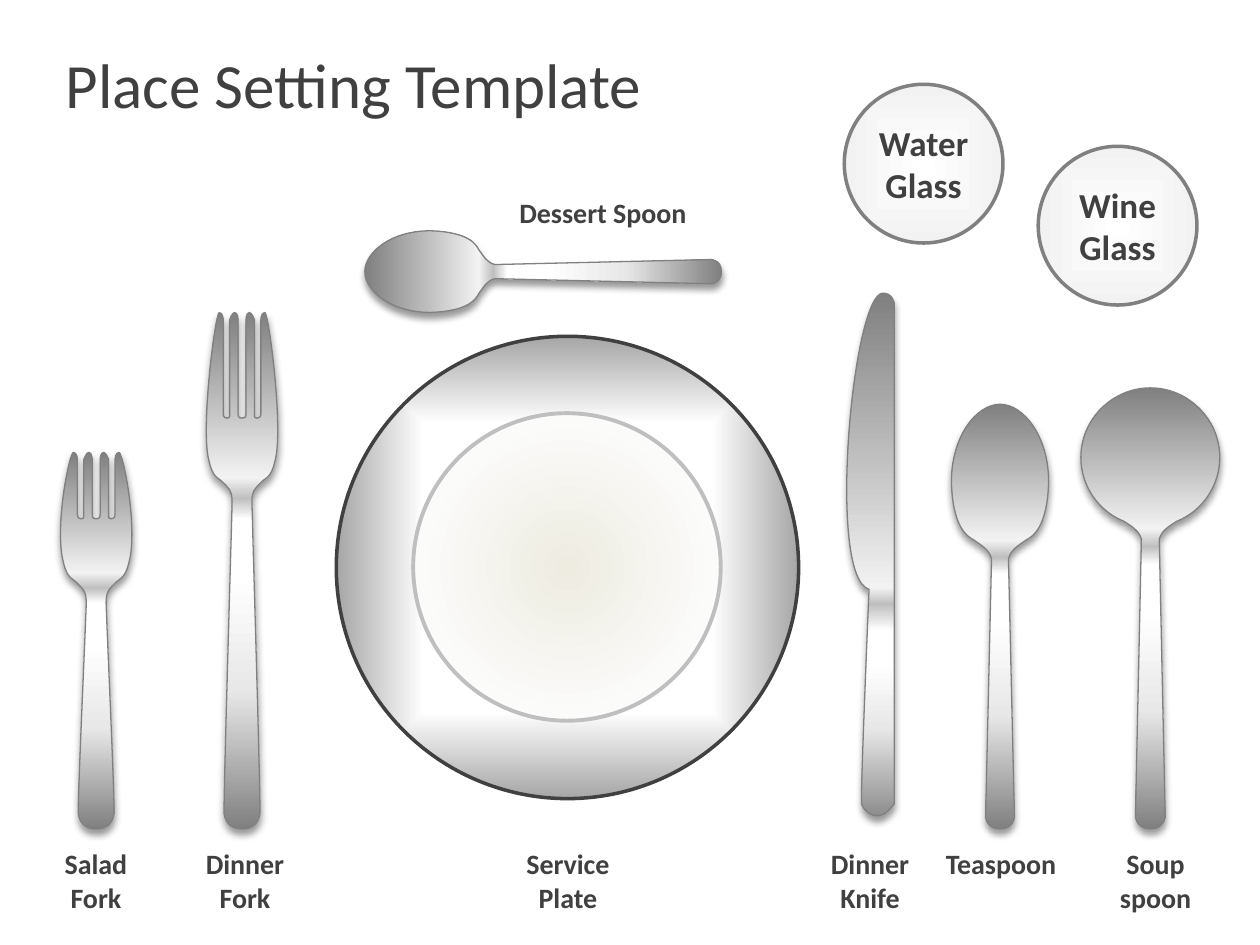
import lxml.etree
import pptx
import pptx.dml.color
import pptx.enum.shapes
import pptx.enum.text
import pptx.oxml
import pptx.oxml.ns
import pptx.util

Cm, Pt = pptx.util.Cm, pptx.util.Pt
qn = pptx.oxml.ns.qn
NS = pptx.oxml.ns.nsdecls("a")

COLORS = {
    "text": "404040", "steel": "808080", "shine": "F2F2F2", "edge": "BFBFBF",
    "white": "FFFFFF", "satin": "E8E8E8", "rim": "A6A6A6",
    "cream": "EEECE1", "china": "FCFCFC", "shadow": "000000",
}
FORK_SPOON = [(0, "steel"), (32, "shine"), (36, "edge"), (40, "white"),
              (51, "white"), (73, "satin"), (100, "steel")]
KNIFE = [(0, "steel"), (55, "shine"), (58, "edge"), (63, "white"),
         (69, "white"), (81, "satin"), (100, "steel")]
GLASS = [(0, "white"), (100, "shine")]
TABLE_EDGE = 16.71  # bottom of the cutlery


# Outlines are Bezier chains: a start point, then two controls and an end
# per curve, as (offset from the axis, height above the bottom) in cm.
def line(a, b):
    return [a, b, b]


def mirrored(half):
    return half + [(-x, y) for x, y in reversed(half[:-1])]


def fork(neck, tip):
    """Outline of a fork whose neck and tine tips lie at the given heights."""
    slot, floor, round_tip = neck + 1.76, neck + 1.68, tip - 0.15
    return mirrored(
        [(0, 0), (0.23, 0), (0.33, 0.13), (0.36, 0.3),
         (0.38, 0.48), (0.2, neck - 0.2), (0.2, neck),
         (0.2, neck + 0.23), (0.28, neck + 0.28), (0.41, neck + 0.41),
         (0.53, neck + 0.51), (0.61, neck + 0.51), (0.69, neck + 0.94),
         (0.81, neck + 1.71), (0.53, tip), (0.46, tip),
         (0.38, tip), (0.38, round_tip), (0.38, round_tip)]
        + line((0.38, round_tip), (0.38, slot))
        + [(0.38, slot), (0.38, floor), (0.3, floor),
           (0.23, floor), (0.25, slot), (0.25, slot)]
        + line((0.25, slot), (0.25, round_tip))
        + [(0.25, round_tip), (0.2, tip), (0.15, tip),
           (0.08, tip), (0.08, round_tip), (0.08, round_tip)]
        + line((0.08, round_tip), (0.08, slot))
        + [(0.08, floor), (0.03, floor), (0, floor)])


def spoon(end, neck, bowl):
    """Outline of a spoon from its handle end, neck point and bowl curves."""
    return mirrored([(0, 0), (0.28, 0), end, end] + line(end, neck) + bowl)


TEASPOON = spoon((0.29, 0.25), (0.17, 5.44), [
    (0.22, 5.64), (0.39, 5.72), (0.52, 5.82),
    (0.65, 5.89), (0.95, 6.05), (0.98, 6.99),
    (0.98, 7.92), (0.47, 8.56), (0, 8.56)])
SOUP_SPOON = spoon((0.3, 0.25), (0.18, 5.84), [
    (0.23, 6.02), (0.38, 6.1), (0.53, 6.2),
    (1.04, 6.4), (1.4, 6.91), (1.4, 7.49),
    (1.4, 8.26), (0.76, 8.89), (0, 8.89)])
DESSERT_SPOON = [(x * 0.84, y * 0.84) for x, y in TEASPOON]
DINNER_KNIFE = (
    [(-0.51, 4.83), (-0.51, 4.83), (-0.69, 0.58), (-0.66, 0.51),
     (-0.66, 0.43), (-0.36, 0), (0, 0.51)]
    + line((0, 0.51), (0, 10.59))
    + [(0, 10.59), (-0.03, 10.8), (-0.23, 10.8),
       (-0.84, 10.8), (-1.37, 5.08), (-0.51, 4.83)])


def rgb(name):
    return pptx.dml.color.RGBColor.from_string(COLORS[name])


class PlaceSetting:
    """Holds the style and the current slide."""

    font = "Calibri"

    def __init__(self, prs):
        self.slide = prs.slides.add_slide(prs.slide_layouts[5])
        self.shapes = self.slide.shapes

    def add_text(self, s, text, size, bold, align, anchor):
        tf = s.text_frame
        tf.word_wrap, tf.vertical_anchor = True, anchor
        p = tf.paragraphs[0]
        p.alignment = align
        r = p.add_run()
        r.text = text
        for name, value in {"name": self.font, "size": Pt(size), "bold": bold}.items():
            setattr(r.font, name, value)
        r.font.color.rgb = rgb("text")
        return tf

    def title(self, text, left, top, width, height):
        s = self.shapes.title
        for name, value in zip(("left", "top", "width", "height"),
                               (left, top, width, height)):
            setattr(s, name, Cm(value))
        self.add_text(s, text, 36, False, pptx.enum.text.PP_ALIGN.LEFT,
                      pptx.enum.text.MSO_ANCHOR.MIDDLE)

    def label(self, text, left, top, width, height):
        s = self.shapes.add_textbox(Cm(left), Cm(top), Cm(width), Cm(height))
        tf = self.add_text(s, text, 16, True, pptx.enum.text.PP_ALIGN.CENTER,
                           pptx.enum.text.MSO_ANCHOR.TOP)
        tf.auto_size = pptx.enum.text.MSO_AUTO_SIZE.SHAPE_TO_FIT_TEXT

    def paint(self, s, stops, direction, outline, weight):
        s.fill.background()
        stop_xml = "".join(
            f'<a:gs pos="{pos * 1000}"><a:srgbClr val="{COLORS[color]}"/></a:gs>'
            for pos, color in stops)
        sp_pr = s._element.spPr
        sp_pr.replace(sp_pr.find(qn("a:noFill")), pptx.oxml.parse_xml(
            f'<a:gradFill {NS} rotWithShape="1"><a:gsLst>{stop_xml}</a:gsLst>'
            f'{direction}</a:gradFill>'))
        s.line.color.rgb, s.line.width = rgb(outline), Pt(weight)
        s.shadow.inherit = False

    def disc(self, left, top, size, stops, shade, outline, weight):
        s = self.shapes.add_shape(pptx.enum.shapes.MSO_SHAPE.OVAL,
                                  Cm(left), Cm(top), Cm(size), Cm(size))
        self.paint(s, stops, f'<a:path path="{shade}"><a:fillToRect l="50000" t="50000" '
                   'r="50000" b="50000"/></a:path>', outline, weight)
        return s

    def glass(self, text, left, top):
        s = self.disc(left, top, 3.2, GLASS, "shape", "steel", 2)
        tf = self.add_text(s, text, 20, True, pptx.enum.text.PP_ALIGN.CENTER,
                           pptx.enum.text.MSO_ANCHOR.MIDDLE)
        tf.margin_left = tf.margin_right = 0

    def cutlery(self, outline, axis, bottom=TABLE_EDGE, stops=FORK_SPOON, rotation=0):
        pts = [(Cm(axis + x), Cm(bottom - y)) for x, y in outline]
        builder = self.shapes.build_freeform(*pts[0], scale=1.0)
        builder.add_line_segments(pts[1:], close=True)
        s = builder.convert_to_shape()
        self.curve(s)
        self.paint(s, stops, '<a:lin ang="5400000" scaled="0"/>', "steel", 0.75)
        s._element.spPr.find(qn("a:effectLst")).append(pptx.oxml.parse_xml(
            f'<a:outerShdw {NS} blurRad="{Pt(4)}" dist="{Pt(3)}" dir="5400000" '
            f'rotWithShape="0"><a:srgbClr val="{COLORS["shadow"]}">'
            '<a:alpha val="40000"/></a:srgbClr></a:outerShdw>'))
        s.rotation = rotation

    @staticmethod
    def curve(s):
        """Turn every three line segments of a freeform into one Bezier curve."""
        outline = next(s._element.iter(qn("a:path")))
        segments = outline.findall(qn("a:lnTo"))
        for i in range(0, len(segments), 3):
            bezier = lxml.etree.Element(qn("a:cubicBezTo"))
            segments[i].addprevious(bezier)
            for segment in segments[i:i + 3]:
                bezier.append(segment[0])
                outline.remove(segment)


def main():
    prs = pptx.Presentation()
    prs.slide_width, prs.slide_height = Cm(25.4), Cm(19.05)
    setting = PlaceSetting(prs)
    setting.title("Place Setting Template", 1.07, 0.43, 15.95, 2.51)

    setting.cutlery(DINNER_KNIFE, 18.03, stops=KNIFE)
    setting.cutlery(TEASPOON, 20.16)
    setting.cutlery(fork(6.6, 10.41), 4.88)
    setting.cutlery(fork(4.57, 7.59), 1.94)
    setting.cutlery(SOUP_SPOON, 23.19)

    plate = setting.disc(6.78, 6.78, 9.32, [(62, "white"), (100, "rim")], "shape", "text", 2)
    well = setting.disc(8.33, 8.33, 6.2, [(0, "cream"), (74, "china")], "circle", "edge", 2.25)
    setting.shapes.add_group_shape([plate, well])

    setting.cutlery(DESSERT_SPOON, 10.95, bottom=9.07, rotation=270)
    setting.glass("Water Glass", 17.02, 1.7)
    setting.glass("Wine Glass", 20.93, 2.95)

    for text, left, width, height in [
        ("Dinner Knife", 15.95, 3.18, 1.63),
        ("Teaspoon", 18.59, 3.18, 0.94),
        ("Soup spoon", 22, 2.59, 1.63),
        ("Service Plate", 9.86, 3.18, 1.63),
        ("Dinner Fork", 3.35, 3.18, 1.63),
        ("Salad Fork", 0.69, 2.49, 1.63),
    ]:
        setting.label(text, left, 16.94, width, height)
    setting.label("Dessert Spoon", 9.96, 3.81, 4.39, 0.94)
    prs.save("out.pptx")


if __name__ == "__main__":
    main()
